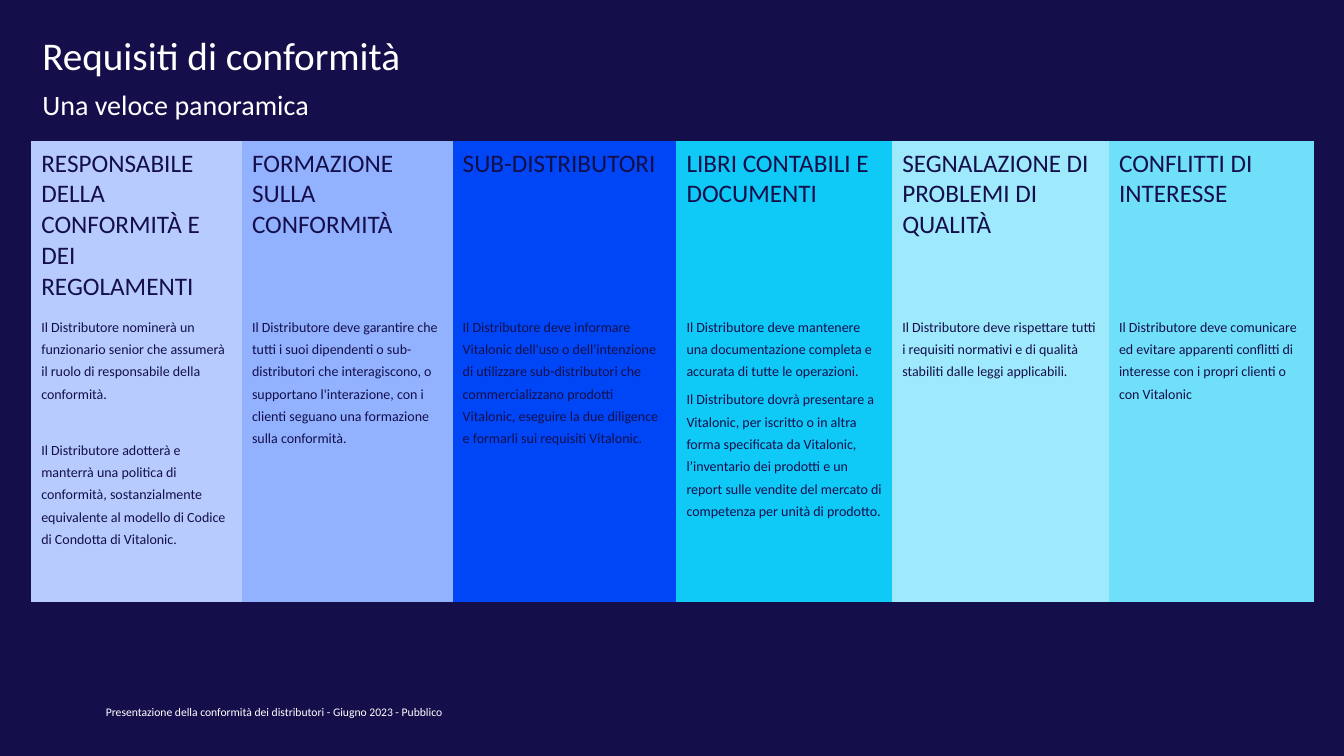
from pptx import Presentation
from pptx.dml.color import RGBColor
from pptx.enum.text import MSO_ANCHOR
from pptx.oxml.ns import qn
from pptx.util import Inches, Pt

NAVY, WHITE = "140F4B", "FFFFFF"
NO_GRID = "{2D5ABB26-0587-4C30-8999-92F81FD0307C}"

# text, (left, top, width, height), size, anchor, line spacing
LABELS = [
    ("Requisiti di conformità", (0.42, 0.38, 12.5, 0.42), 28, MSO_ANCHOR.TOP, 0.85),
    ("Una veloce panoramica", (0.42, 0.87, 12.19, 0.4), 20, MSO_ANCHOR.TOP, 1.0),
    ("Presentazione della conformità dei distributori - Giugno 2023 - Pubblico",
     (1.05, 6.99, 9.59, 0.14), 8.3, MSO_ANCHOR.BOTTOM, 1.0),
]

# heading, fill, width, paragraphs, gap before each later paragraph
COLUMNS = [
    ("RESPONSABILE DELLA CONFORMITÀ E DEI REGOLAMENTI", "B7CBFF", 2.09, [
        "Il Distributore nominerà un funzionario senior che assumerà il ruolo di "
        "responsabile della conformità.",
        "Il Distributore adotterà e manterrà una politica di conformità, "
        "sostanzialmente equivalente al modello di Codice di Condotta di Vitalonic.",
    ], 20),
    ("FORMAZIONE SULLA CONFORMITÀ", "92B1FF", 2.09, [
        "Il Distributore deve garantire che tutti i suoi dipendenti o "
        "sub-distributori che interagiscono, o supportano l'interazione, con i "
        "clienti seguano una formazione sulla conformità.",
    ], 0),
    ("SUB-DISTRIBUTORI", "0046F7", 2.22, [
        "Il Distributore deve informare Vitalonic dell'uso o dell'intenzione di "
        "utilizzare sub-distributori che commercializzano prodotti Vitalonic, "
        "eseguire la due diligence e formarli sui requisiti Vitalonic.",
    ], 0),
    ("LIBRI CONTABILI E DOCUMENTI", "0FC9F7", 2.14, [
        "Il Distributore deve mantenere una documentazione completa e accurata "
        "di tutte le operazioni.",
        "Il Distributore dovrà presentare a Vitalonic, per iscritto o in altra "
        "forma specificata da Vitalonic, l’inventario dei prodotti e un report "
        "sulle vendite del mercato di competenza per unità di prodotto.",
    ], 0),
    ("SEGNALAZIONE DI PROBLEMI DI QUALITÀ", "9FE9FC", 2.15, [
        "Il Distributore deve rispettare tutti i requisiti normativi e di qualità "
        "stabiliti dalle leggi applicabili.",
    ], 0),
    ("CONFLITTI DI INTERESSE", "6FDFFA", 2.03, [
        "Il Distributore deve comunicare ed evitare apparenti conflitti di "
        "interesse con i propri clienti o con Vitalonic",
    ], 0),
]
ROWS = [1.63, 2.93]
LEFT, TOP = 0.31, 1.4


def rgb(code):
    return RGBColor.from_string(code)


def assign(target, **values):
    """Set each named attribute on the target."""
    for name, value in values.items():
        setattr(target, name, value)


def write(frame, texts, size, color, gap=0, **layout):
    """Fill a text frame with one paragraph per text; gap precedes later ones."""
    for i, text in enumerate(texts):
        para = frame.add_paragraph() if i else frame.paragraphs[0]
        assign(para, **layout)
        if i and gap:
            para.space_before = Pt(gap)
        run = para.add_run()
        run.text = text
        assign(run.font, name="Calibri", size=Pt(size))
        run.font.color.rgb = rgb(color)


def add_label(slide, text, box, size, anchor, spacing):
    frame = slide.shapes.add_textbox(*map(Inches, box)).text_frame
    assign(frame, word_wrap=True, vertical_anchor=anchor, margin_left=0,
           margin_right=0, margin_top=0, margin_bottom=0)
    write(frame, [text], size, WHITE, line_spacing=spacing)


def fill_cell(cell, fill, bottom):
    cell.fill.solid()
    cell.fill.fore_color.rgb = rgb(fill)
    assign(cell, margin_left=Inches(0.1), margin_right=Inches(0.1),
           margin_top=Inches(0.07), margin_bottom=Inches(bottom))


def add_grid(slide):
    width = sum(col[2] for col in COLUMNS)
    box = map(Inches, (LEFT, TOP, width, sum(ROWS)))
    table = slide.shapes.add_table(len(ROWS), len(COLUMNS), *box).table
    assign(table, first_row=False, horz_banding=False)
    table._tbl.tblPr.find(qn("a:tableStyleId")).text = NO_GRID
    for row, height in zip(table.rows, ROWS):
        row.height = Inches(height)
    for i, (heading, fill, wide, texts, gap) in enumerate(COLUMNS):
        table.columns[i].width = Inches(wide)
        head, body = table.cell(0, i), table.cell(1, i)
        fill_cell(head, fill, 0.07)
        fill_cell(body, fill, 0.03)
        write(head.text_frame, [heading], 18, NAVY)
        write(body.text_frame, texts, 10, NAVY, gap,
              line_spacing=Pt(16), space_after=Pt(4))


def main():
    deck = Presentation()
    assign(deck, slide_width=Inches(13.33), slide_height=Inches(7.5))
    slide = deck.slides.add_slide(deck.slide_layouts[6])
    slide.background.fill.solid()
    slide.background.fill.fore_color.rgb = rgb(NAVY)
    for label in LABELS:
        add_label(slide, *label)
    add_grid(slide)
    deck.save("out.pptx")


if __name__ == "__main__":
    main()
